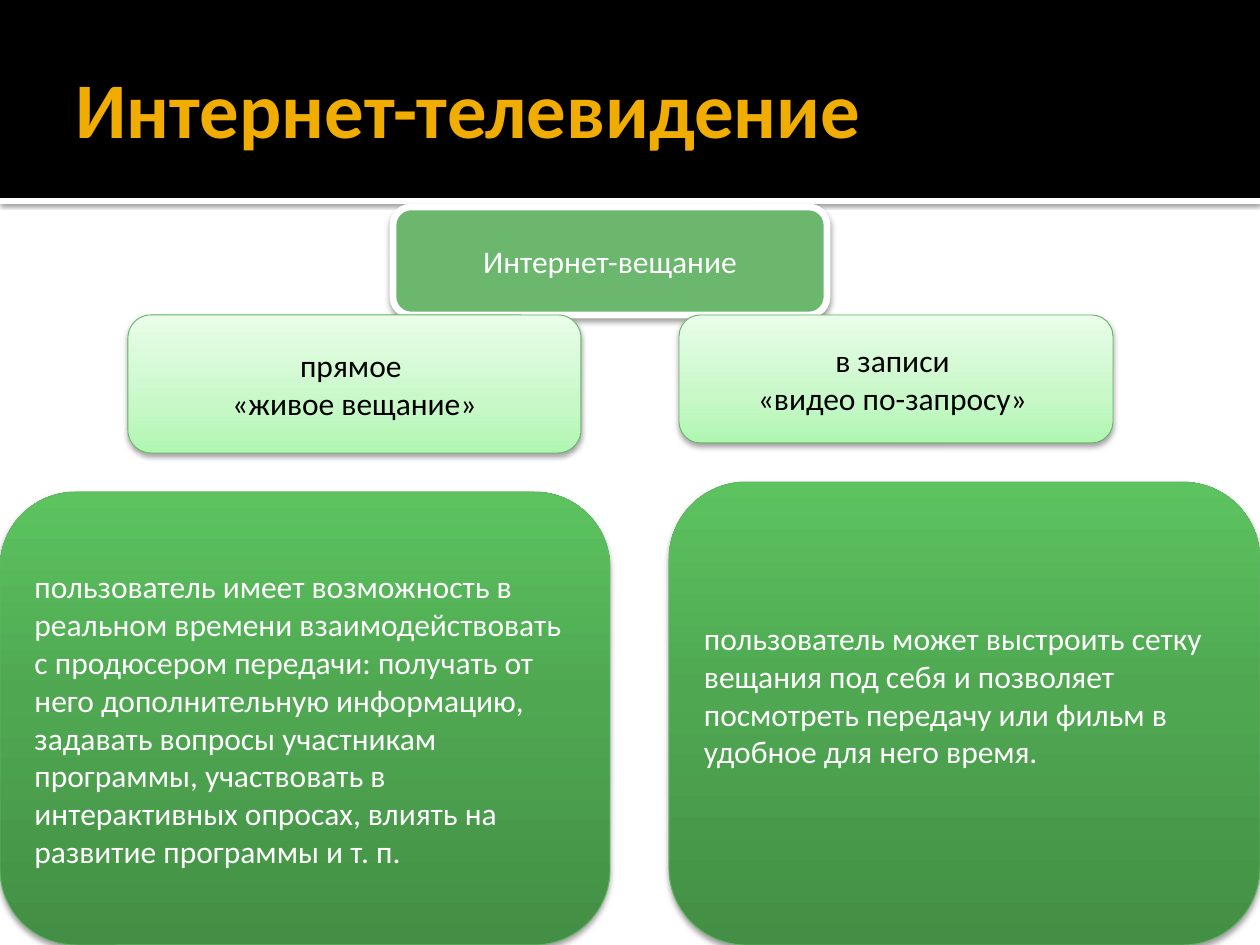
from copy import deepcopy

from lxml import etree
from pptx import Presentation
from pptx import util as u
from pptx.dml.color import RGBColor
from pptx.enum import shapes, text
from pptx.oxml.ns import qn

PX = 914400 / 126
COLORS = {
    "black": "000000", "white": "FFFFFF", "gold": "F0AD00",
    "root": "6BB76D", "edge": "67B569",
    "pale_bottom": "B0F6B1", "pale_middle": "C8F8C8", "pale_top": "E9FDE9",
    "deep_bottom": "438F45", "deep_middle": "4FA851", "deep_top": "5CC35F",
}
PALE = [(0, "pale_bottom"), (0.35, "pale_middle"), (1, "pale_top")]
DEEP = [(0, "deep_bottom"), (0.55, "deep_middle"), (1, "deep_top")]
CENTER = text.PP_ALIGN.CENTER
LEFT = text.PP_ALIGN.LEFT
LIVE = (
    "пользователь имеет возможность в реальном времени взаимодействовать "
    "с продюсером передачи: получать от него дополнительную информацию, "
    "задавать вопросы участникам программы, участвовать в интерактивных "
    "опросах, влиять на развитие программы и т. п."
)
ON_DEMAND = (
    "пользователь может выстроить сетку вещания под себя и позволяет "
    "посмотреть передачу или фильм в удобное для него время."
)


def px(value):
    """Turn pixels into EMU."""
    return u.Emu(round(value * PX))


def rgb(name):
    """Look up a named colour."""
    return RGBColor.from_string(COLORS[name])


def set_values(target, values):
    """Set every attribute given in a dict."""
    for name, value in values.items():
        setattr(target, name, value)


def write(shape, lines, color, size=18, bold=False, align=LEFT, margins=None):
    """Fill a shape with vertically centred paragraphs."""
    frame = shape.text_frame
    set_values(frame, {"word_wrap": True, "vertical_anchor": text.MSO_ANCHOR.MIDDLE})
    set_values(frame, margins or {})
    for index, line in enumerate(lines):
        paragraph = frame.add_paragraph() if index else frame.paragraphs[0]
        paragraph.alignment = align
        run = paragraph.add_run()
        run.text = line
        set_values(run.font, {"name": "Calibri", "size": u.Pt(size), "bold": bold})
        run.font.color.rgb = rgb(color)


def set_gradient(shape, stops):
    """Apply a three-stop gradient that runs from bottom to top."""
    shape.fill.gradient()
    shape.fill.gradient_angle = 90
    stop_list = shape._element.spPr.find(".//" + qn("a:gsLst"))
    stop_list.insert(1, deepcopy(stop_list[0]))
    for stop, (position, color) in zip(shape.fill.gradient_stops, stops):
        stop.position = position
        stop.color.rgb = rgb(color)


def add_shadow(shape, alpha, blur, distance):
    """Add a black shadow that falls straight down."""
    effects = shape._element.spPr.find(qn("a:effectLst"))
    shadow = etree.SubElement(
        effects, qn("a:outerShdw"), blurRad=str(u.Pt(blur)), dist=str(u.Pt(distance)),
        dir="5400000", algn="t", rotWithShape="0")
    color = etree.SubElement(shadow, qn("a:srgbClr"), val=COLORS["black"])
    etree.SubElement(color, qn("a:alpha"), val=str(alpha * 1000))


def add_box(slide, kind, box, fill, line=None, width=0.5, shadow=None):
    """Add a preset shape with a plain or gradient fill."""
    shape = slide.shapes.add_shape(kind, *map(px, box))
    shape.shadow.inherit = False
    if isinstance(fill, list):
        set_gradient(shape, fill)
    else:
        shape.fill.solid()
        shape.fill.fore_color.rgb = rgb(fill)
    if line:
        shape.line.color.rgb = rgb(line)
        shape.line.width = u.Pt(width)
    else:
        shape.line.fill.background()
    if shadow:
        add_shadow(shape, *shadow)
    return shape


def add_header(slide):
    """Add the black band, its white edge and the title."""
    rectangle = shapes.MSO_SHAPE.RECTANGLE
    add_box(slide, rectangle, (0, 198, 1260, 6), "white", shadow=(60, 2.5, 0.8))
    add_box(slide, rectangle, (0, 0, 1260, 198), "black")
    title = slide.shapes.add_textbox(*map(px, (63, 21, 1134, 173)))
    write(title, ["Интернет-телевидение"], "gold", 45, True,
          margins={"margin_right": px(6)})


def add_card(slide, box, lines, fill, color, align=LEFT, blur=3.5,
             line="edge", width=0.5, margins=None):
    """Add a rounded card with text."""
    card = add_box(slide, shapes.MSO_SHAPE.ROUNDED_RECTANGLE, box, fill,
                   line, width, (38, blur, 2))
    write(card, lines, color, align=align, margins=margins)


def main():
    """Build and save the slide."""
    presentation = Presentation()
    set_values(presentation, {"slide_width": px(1260), "slide_height": px(945)})
    slide = presentation.slides.add_slide(presentation.slide_layouts[6])
    add_header(slide)
    add_card(slide, (393, 207, 434, 108), ["Интернет-вещание"], "root", "white",
             CENTER, line="white", width=3.82)
    for box, lines in (
        ((679, 315, 434, 128), ["в записи ", "«видео по-запросу» "]),
        ((128, 315, 453, 138), ["прямое ", "«живое вещание»"]),
    ):
        add_card(slide, box, lines, PALE, "black", CENTER)
    for box, description, bottom in (
        ((0, 492, 610, 453), LIVE, 6),
        ((669, 482, 591, 463), ON_DEMAND, 44),
    ):
        add_card(slide, box, [description], DEEP, "white", blur=3.1,
                 margins={"margin_bottom": px(bottom)})
    presentation.save("out.pptx")


if __name__ == "__main__":
    main()
